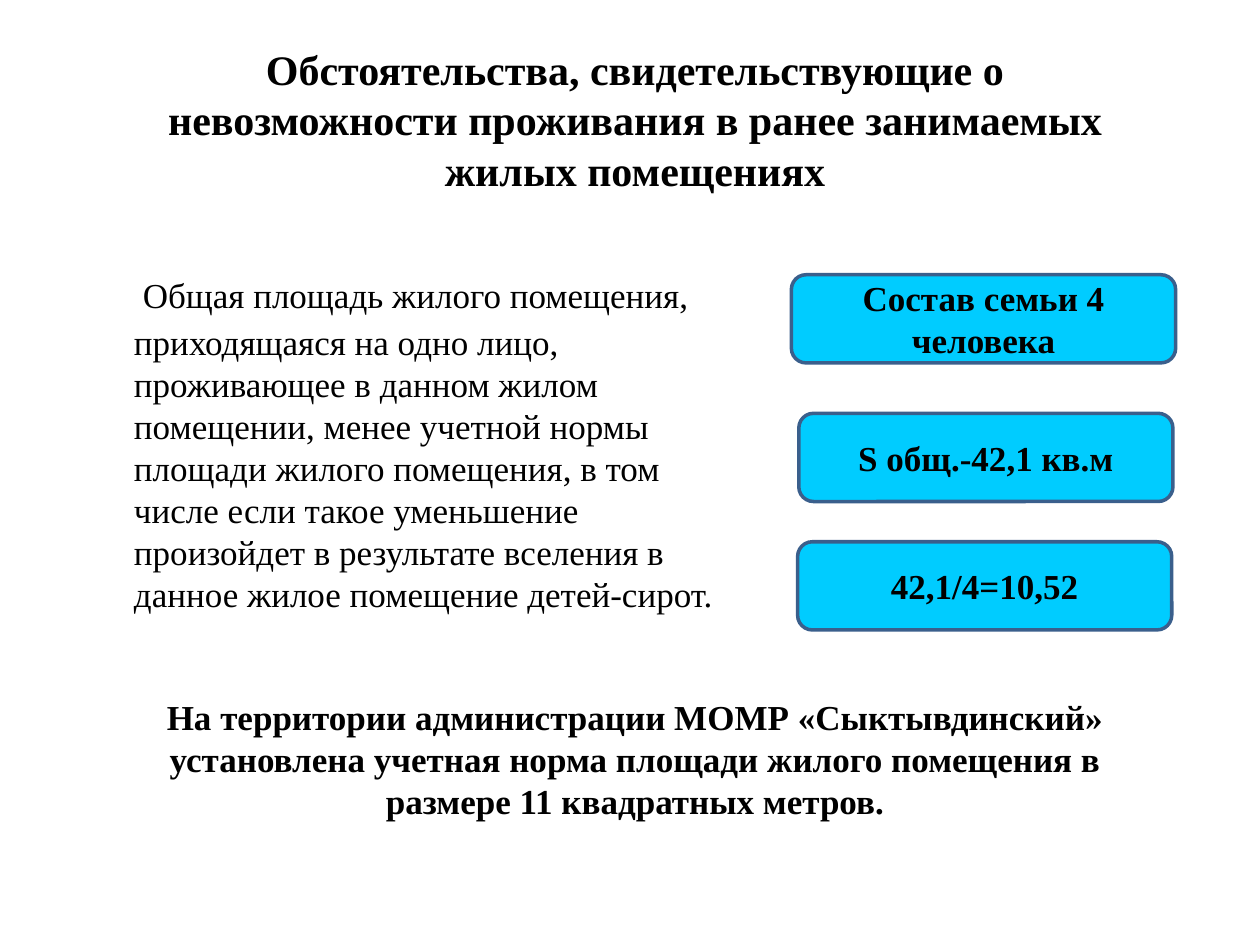
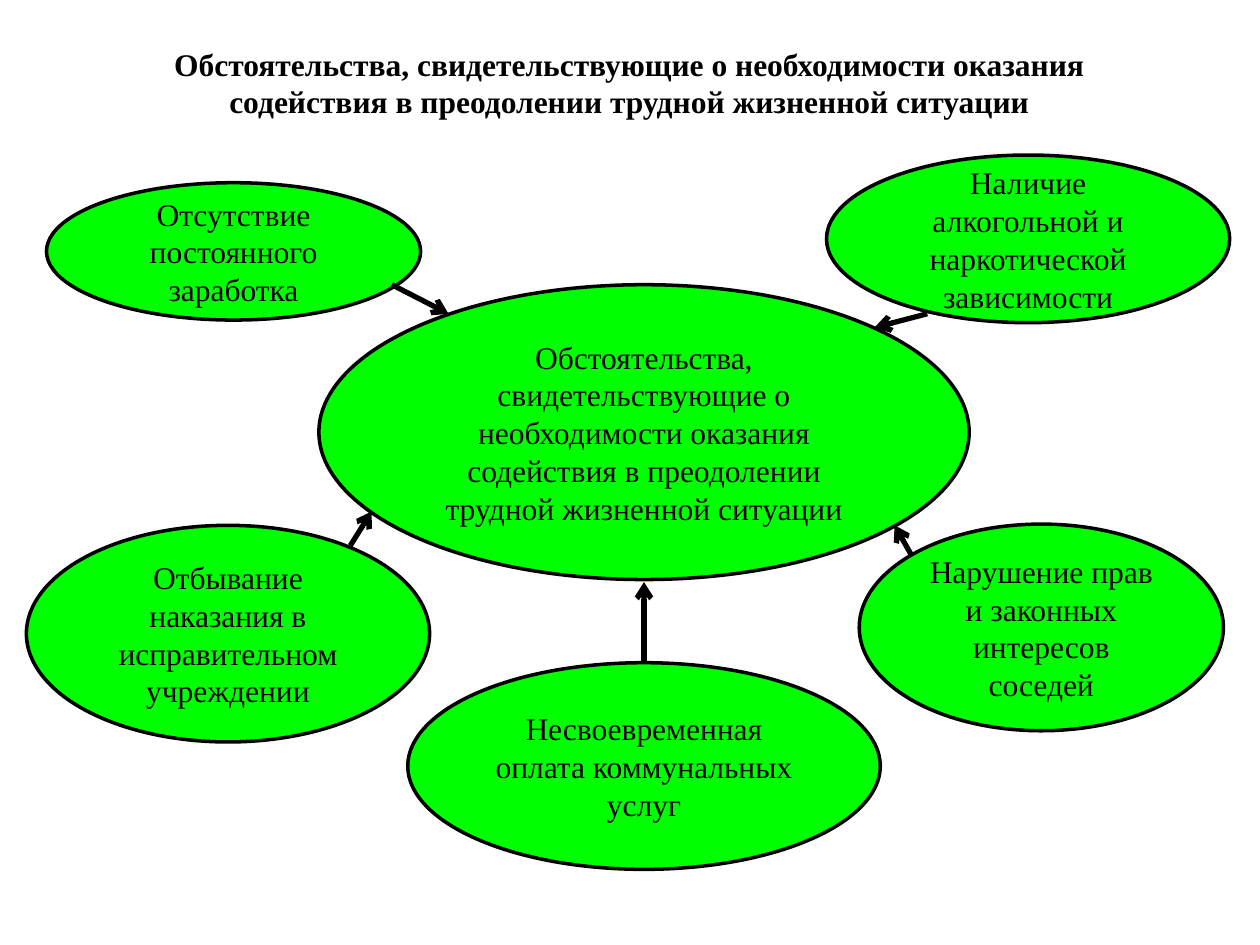
from dataclasses import dataclass

from lxml.etree import SubElement
from pptx import Presentation
from pptx.dml.color import RGBColor
from pptx.enum.shapes import MSO_CONNECTOR, MSO_SHAPE
from pptx.enum.text import MSO_ANCHOR, PP_ALIGN
from pptx.oxml.ns import qn
from pptx.util import Pt


@dataclass(frozen=True)
class Theme:
    font: str = "Times New Roman"
    ink: str = "000000"
    cyan: str = "00CCFF"
    edge: str = "3A5F8C"
    green: str = "00FF00"
    head: int = 24
    large: int = 32
    text: int = 20
    small: int = 18
    rim: int = 2
    arrow: int = 3


def write(para, text, size, theme, bold=False):
    run = para.add_run()
    run.text = text
    font = run.font
    font.name, font.size, font.bold = theme.font, Pt(size), bold
    font.color.rgb = RGBColor.from_string(theme.ink)


class Deck:
    def __init__(self, theme):
        self.theme = theme
        self.show = Presentation()
        self.show.slide_width, self.show.slide_height = Pt(720), Pt(540)
        self.slide = None

    def start(self):
        self.slide = self.show.slides.add_slide(self.show.slide_layouts[6])

    def label(self, area, text, size, bold=True, anchor=MSO_ANCHOR.TOP):
        """Add a centred text box and return its frame."""
        frame = self.slide.shapes.add_textbox(*map(Pt, area)).text_frame
        frame.word_wrap = True
        frame.vertical_anchor = anchor
        para = frame.paragraphs[0]
        para.alignment = PP_ALIGN.CENTER
        write(para, text, size, self.theme, bold)
        return frame

    def title(self, area, text, size, base=3.6):
        frame = self.label(area, text, size, anchor=MSO_ANCHOR.MIDDLE)
        frame.margin_bottom = Pt(base)

    def body(self, area, text):
        """Add a hanging paragraph whose first line is set taller."""
        frame = self.slide.shapes.add_textbox(*map(Pt, area)).text_frame
        frame.word_wrap = True
        para = frame.paragraphs[0]
        props = para._p.get_or_add_pPr()
        props.set("marL", str(Pt(27)))
        props.set("indent", str(Pt(-3)))
        write(para, " ", self.theme.large, self.theme)
        write(para, text, self.theme.text, self.theme)

    def shape(self, kind, area, text, fill, edge, size, bold=False):
        item = self.slide.shapes.add_shape(kind, *map(Pt, area))
        item.shadow.inherit = False
        item.fill.solid()
        item.fill.fore_color.rgb = RGBColor.from_string(fill)
        item.line.color.rgb = RGBColor.from_string(edge)
        item.line.width = Pt(self.theme.rim)
        frame = item.text_frame
        frame.word_wrap = True
        frame.vertical_anchor = MSO_ANCHOR.MIDDLE
        para = frame.paragraphs[0]
        para.alignment = PP_ALIGN.CENTER
        write(para, text, size, self.theme, bold)
        return item

    def box(self, area, text):
        theme = self.theme
        return self.shape(MSO_SHAPE.ROUNDED_RECTANGLE, area, text,
                          theme.cyan, theme.edge, theme.text, bold=True)

    def oval(self, area, text):
        theme = self.theme
        return self.shape(MSO_SHAPE.OVAL, area, text,
                          theme.green, theme.ink, theme.small)

    def arrow(self, *ends):
        link = self.slide.shapes.add_connector(MSO_CONNECTOR.STRAIGHT, *map(Pt, ends))
        link.line.color.rgb = RGBColor.from_string(self.theme.ink)
        link.line.width = Pt(self.theme.arrow)
        SubElement(link.line._get_or_add_ln(), qn("a:tailEnd"), type="arrow")
        SubElement(link._element.spPr, qn("a:effectLst"))
        return link


def area_slide(deck):
    deck.start()
    deck.body((42.5, 141, 380, 231),
              "Общая площадь жилого помещения, приходящаяся на одно лицо, "
              "проживающее в данном жилом помещении, менее учетной нормы площади "
              "жилого помещения, в том числе если такое уменьшение произойдет "
              "в результате вселения в данное жилое помещение детей-сирот.")
    deck.label((56.2, 393.8, 613.4, 80),
               "На территории администрации МОМР «Сыктывдинский» установлена "
               "учетная норма площади жилого помещения в размере 11 квадратных "
               "метров.", deck.theme.text)
    for left, top, width, text in (
        (452.2, 157, 219.6, "Состав семьи 4 человека"),
        (456.5, 236.2, 213.8, "S общ.-42,1 кв.м"),
        (455.8, 309.6, 213.8, "42,1/4=10,52"),
    ):
        deck.box((left, top, width, 50.4), text)
    deck.title((67.7, 25.9, 590.4, 84.2),
               "Обстоятельства, свидетельствующие о невозможности проживания "
               "в ранее занимаемых жилых помещениях", deck.theme.head)


def causes_slide(deck):
    topic = ("Обстоятельства, свидетельствующие о необходимости оказания "
             "содействия в преодолении трудной жизненной ситуации")
    deck.start()
    deck.title((79.2, 22.3, 560.9, 67.7), topic, deck.theme.small, base=21.6)
    deck.oval((182.2, 162.7, 371.6, 168.5), topic)
    for area, text, ends in (
        ((26.6, 104.4, 213.8, 78.5), "Отсутствие постоянного заработка",
         (223.9, 162.7, 256.3, 179.3)),
        ((472.3, 88.6, 230.4, 95.8), "Наличие алкогольной и наркотической зависимости",
         (529.9, 179.3, 499.7, 187.2)),
        ((491, 299.5, 208.1, 118.1), "Нарушение прав и законных интересов соседей",
         (520.6, 316.8, 511.2, 300.2)),
        ((15.1, 300.2, 230.4, 123.8), "Отбывание наказания в исправительном учреждении",
         (200.2, 311.8, 212.4, 292.3)),
    ):
        deck.oval(area, text)
        deck.arrow(*ends)
    debt = deck.oval((233, 378.7, 270, 118.1), "Несвоевременная оплата коммунальных услуг")
    deck.arrow(368, 378.7, 368, 332.6).begin_connect(debt, 0)


def main():
    deck = Deck(Theme())
    area_slide(deck)
    causes_slide(deck)
    deck.show.save("out.pptx")


if __name__ == "__main__":
    main()
